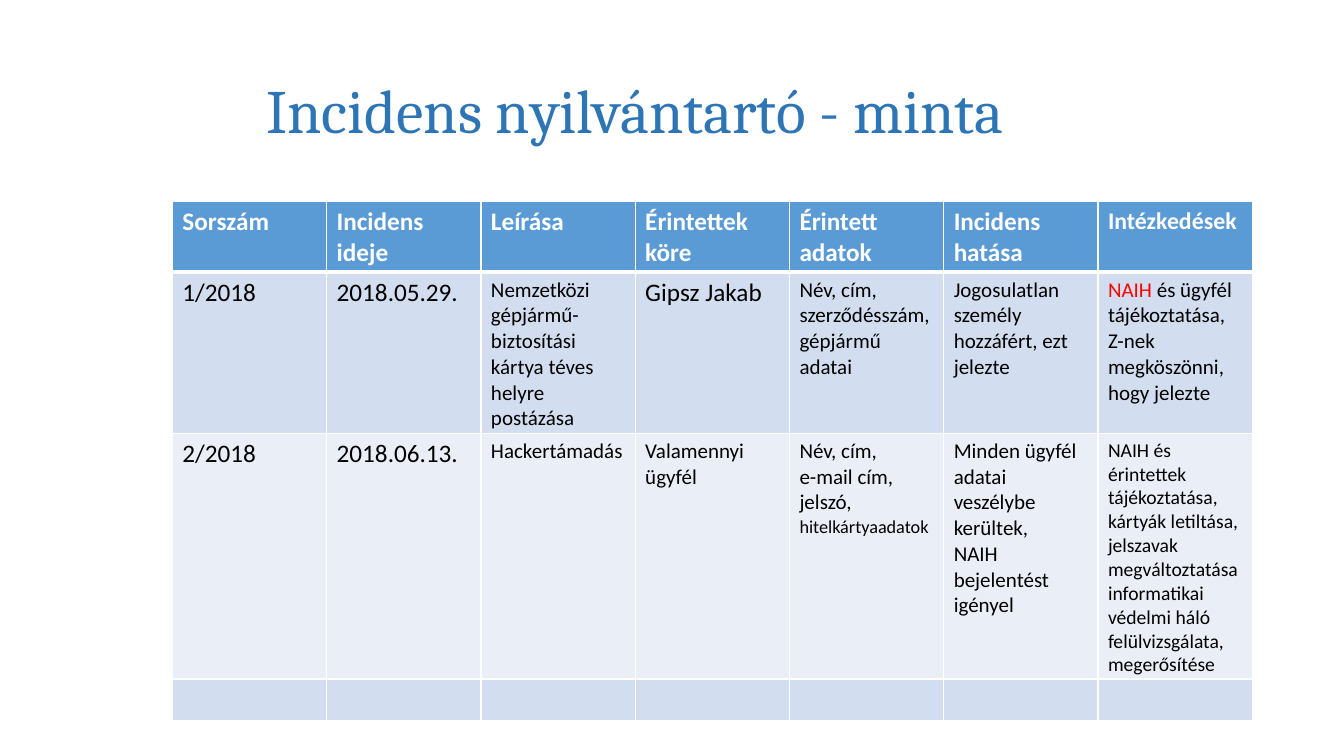
import lxml.etree
import pptx
import pptx.dml.color
import pptx.enum.text
import pptx.oxml.ns
import pptx.util

Inches, Pt = pptx.util.Inches, pptx.util.Pt
RGBColor = pptx.dml.color.RGBColor
qn = pptx.oxml.ns.qn

WHITE = RGBColor(0xFF, 0xFF, 0xFF)
BLACK = RGBColor(0x00, 0x00, 0x00)
RED = RGBColor(0xFF, 0x00, 0x00)
TITLE_BLUE = RGBColor(0x2E, 0x75, 0xB6)
HEADER_BLUE = RGBColor(0x5B, 0x9B, 0xD5)
BANDS = [RGBColor(0xD2, 0xDE, 0xEF), RGBColor(0xEA, 0xEF, 0xF7)]

COLUMN_WIDTH = 1.53
ROW_HEIGHT = 0.41


# Each cell is a list of paragraphs, each a list of (text, size, colour) runs.
def plain(size, *paragraphs):
    return [[(text, size, BLACK)] for text in paragraphs]


HEADINGS = [("Sorszám", 18), ("Incidens ideje", 18), ("Leírása", 18),
            ("Érintettek köre", 18), ("Érintett adatok", 18),
            ("Incidens hatása", 18), ("Intézkedések", 17)]
INCIDENTS = [
    [
        plain(18, "1/2018"),
        plain(18, "2018.05.29."),
        plain(15, "Nemzetközi gépjármű-biztosítási kártya téves helyre postázása"),
        plain(18, "Gipsz Jakab"),
        plain(15, "Név, cím, szerződésszám, gépjármű adatai"),
        plain(15, "Jogosulatlan személy hozzáfért, ezt jelezte"),
        [[("NAIH ", 15, RED),
          ("és ügyfél tájékoztatása, Z-nek megköszönni, hogy jelezte", 15, BLACK)]],
    ],
    [
        plain(18, "2/2018"),
        plain(18, "2018.06.13."),
        plain(15, "Hackertámadás"),
        plain(15, "Valamennyi ügyfél"),
        [[("Név, cím, \ne-mail cím, jelszó, ", 15, BLACK),
          ("hitelkártyaadatok", 13, BLACK)]],
        plain(15, "Minden ügyfél adatai veszélybe kerültek,",
              "NAIH bejelentést igényel"),
        plain(14, "NAIH és érintettek tájékoztatása,\n"
                  "kártyák letiltása, jelszavak megváltoztatása\n"
                  "informatikai védelmi háló felülvizsgálata, megerősítése"),
    ],
    [[] for _ in HEADINGS],
]


class IncidentSlide:
    body_font = "Calibri"
    title_font = "Cambria"

    def __init__(self, presentation):
        self.slide = presentation.slides.add_slide(presentation.slide_layouts[6])

    def style(self, run, font, size, color, bold=False):
        run.font.name = font
        run.font.size = Pt(size)
        run.font.color.rgb = color
        run.font.bold = bold

    def title(self, text, left, top, width, height):
        frame = self.slide.shapes.add_textbox(
            Inches(left), Inches(top), Inches(width), Inches(height)).text_frame
        frame.word_wrap = True
        frame.vertical_anchor = pptx.enum.text.MSO_ANCHOR.MIDDLE
        frame.text = text
        frame.paragraphs[0].line_spacing = 0.9
        self.style(frame.paragraphs[0].runs[0], self.title_font, 44, TITLE_BLUE)

    def border(self, cell, bottom):
        properties = cell._tc.get_or_add_tcPr()
        for side, width in (("L", 1), ("R", 1), ("T", 1), ("B", bottom)):
            line = lxml.etree.SubElement(
                properties, qn(f"a:ln{side}"), w=str(int(Pt(width))))
            fill = lxml.etree.SubElement(line, qn("a:solidFill"))
            lxml.etree.SubElement(fill, qn("a:srgbClr"), val=str(WHITE))

    def fill_text(self, cell, paragraphs, bold):
        frame = cell.text_frame
        for index, parts in enumerate(paragraphs):
            paragraph = frame.add_paragraph() if index else frame.paragraphs[0]
            first_text, first_size, first_color = parts[0]
            paragraph.text = first_text
            for run in paragraph.runs:
                self.style(run, self.body_font, first_size, first_color, bold)
            for line_break in paragraph._p.findall(qn("a:br")):
                lxml.etree.SubElement(
                    line_break, qn("a:rPr"), sz=str(first_size * 100))
            for text, size, color in parts[1:]:
                run = paragraph.add_run()
                run.text = text
                self.style(run, self.body_font, size, color, bold)

    def table(self, rows, left, top):
        columns = len(rows[0])
        table = self.slide.shapes.add_table(
            len(rows), columns, Inches(left), Inches(top),
            Inches(COLUMN_WIDTH * columns), Inches(ROW_HEIGHT * len(rows))).table
        for column in table.columns:
            column.width = Inches(COLUMN_WIDTH)
        for r, row in enumerate(rows):
            table.rows[r].height = Inches(ROW_HEIGHT)
            is_header = r == 0
            for c, paragraphs in enumerate(row):
                cell = table.cell(r, c)
                self.border(cell, bottom=3 if is_header else 1)
                cell.fill.solid()
                cell.fill.fore_color.rgb = HEADER_BLUE if is_header else BANDS[(r - 1) % 2]
                self.fill_text(cell, paragraphs, is_header)


def main():
    presentation = pptx.Presentation()
    presentation.slide_width = Inches(13.33)
    presentation.slide_height = Inches(7.5)
    register = IncidentSlide(presentation)
    register.title("Incidens nyilvántartó - minta", 2.54, 0.4, 9.88, 1.45)
    header = [[[(text, size, WHITE)]] for text, size in HEADINGS]
    register.table([header, *INCIDENTS], 1.71, 2)
    presentation.save("out.pptx")


if __name__ == "__main__":
    main()
